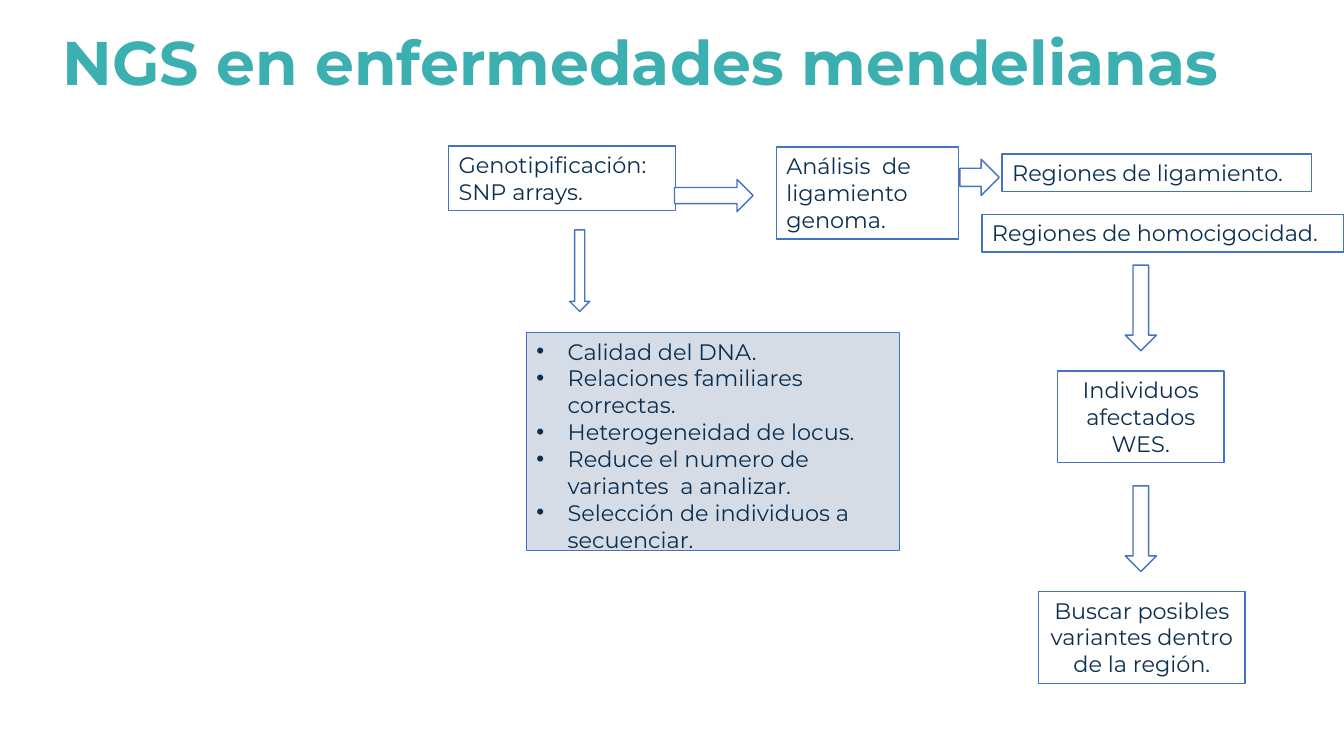
import pptx
import pptx.dml.color
import pptx.enum.shapes
import pptx.enum.text
import pptx.util

PX = 9144  # EMU per px, 100 px to the inch
FONT = "Montserrat"
TEAL, NAVY, BLUE, WHITE, GREY = "3CB0B0", "0B2F51", "4472C4", "FFFFFF", "D6DCE5"

SHAPE = pptx.enum.shapes.MSO_SHAPE
ALIGN = pptx.enum.text.PP_ALIGN
ANCHOR = pptx.enum.text.MSO_ANCHOR
AUTO_SIZE = pptx.enum.text.MSO_AUTO_SIZE

STEPS = [
    ("Análisis  de ligamiento genoma.", (770, 146, 181, 91), ALIGN.LEFT),
    ("Regiones de ligamiento.", (994, 153, 307, 37), ALIGN.LEFT),
    ("Buscar posibles variantes dentro de la región.", (1030, 587, 205, 91), ALIGN.CENTER),
    ("Regiones de homocigocidad.", (974, 213, 359, 37), ALIGN.LEFT),
    ("Individuos afectados WES.", (1049, 368, 165, 91), ALIGN.CENTER),
    ("Genotipificación: SNP arrays.", (445, 145, 225, 64), ALIGN.LEFT),
]
ARROWS = [
    (SHAPE.RIGHT_ARROW, (669, 178, 78, 32)),
    (SHAPE.RIGHT_ARROW, (952, 158, 39, 36)),
    (SHAPE.DOWN_ARROW, (1116, 263, 31, 85)),
    (SHAPE.DOWN_ARROW, (1116, 482, 31, 85)),
    (SHAPE.DOWN_ARROW, (565, 228, 20, 81)),
]
CONSIDERATIONS = [
    "Calidad del DNA.",
    "Relaciones familiares correctas.",
    "Heterogeneidad de locus.",
    "Reduce el numero de variantes  a analizar.",
    "Selección de individuos a secuenciar.",
]


def rgb(value):
    return pptx.dml.color.RGBColor.from_string(value)


def emu(box):
    return [px * PX for px in box]


def place(sp, box):
    sp.left, sp.top, sp.width, sp.height = emu(box)


def paint(sp, fill):
    """Give a shape its fill and the blue outline."""
    sp.fill.solid()
    sp.fill.fore_color.rgb = rgb(fill)
    sp.line.color.rgb = rgb(BLUE)
    sp.line.width = pptx.util.Pt(1)


def format_runs(p, size, color, bold=False):
    for r in p.runs:
        r.font.name = FONT
        r.font.size = pptx.util.Pt(size)
        r.font.bold = bold
        r.font.color.rgb = rgb(color)


def add_shape(s, kind, box):
    sp = s.shapes.add_shape(kind, *emu(box))
    sp.shadow.inherit = False
    paint(sp, WHITE)
    return sp


def add_step(s, text, box, align):
    tf = add_shape(s, SHAPE.RECTANGLE, box).text_frame
    tf.word_wrap = True
    tf.auto_size = AUTO_SIZE.SHAPE_TO_FIT_TEXT
    tf.vertical_anchor = ANCHOR.TOP
    p = tf.paragraphs[0]
    p.text = text
    p.alignment = align
    format_runs(p, 16, NAVY)


def set_title(sp, text, box):
    place(sp, box)
    tf = sp.text_frame
    tf.text = text
    tf.auto_size = AUTO_SIZE.NONE
    tf.vertical_anchor = ANCHOR.MIDDLE
    p = tf.paragraphs[0]
    p.alignment = ALIGN.LEFT
    p.line_spacing = 0.9
    format_runs(p, 44, TEAL, bold=True)


def set_list(sp, items, box):
    place(sp, box)
    paint(sp, GREY)
    tf = sp.text_frame
    tf.text = "\n".join(items)
    tf.auto_size = AUTO_SIZE.SHAPE_TO_FIT_TEXT
    for p in tf.paragraphs:
        pPr = p._p.get_or_add_pPr()
        pPr.set("marL", str(31 * PX))
        pPr.set("indent", str(-31 * PX))
        p.space_before = pptx.util.Pt(0)
        format_runs(p, 16, NAVY)


def main():
    prs = pptx.Presentation()
    prs.slide_width, prs.slide_height = emu((1333, 750))
    s = prs.slides.add_slide(prs.slide_layouts[1])
    set_title(s.shapes.title, "NGS en enfermedades mendelianas\v", (52, 58, 1235, 87))
    set_list(s.placeholders[1], CONSIDERATIONS, (522, 330, 370, 226))
    for text, box, align in STEPS:
        add_step(s, text, box, align)
    for kind, box in ARROWS:
        add_shape(s, kind, box)
    prs.save("out.pptx")


if __name__ == "__main__":
    main()
